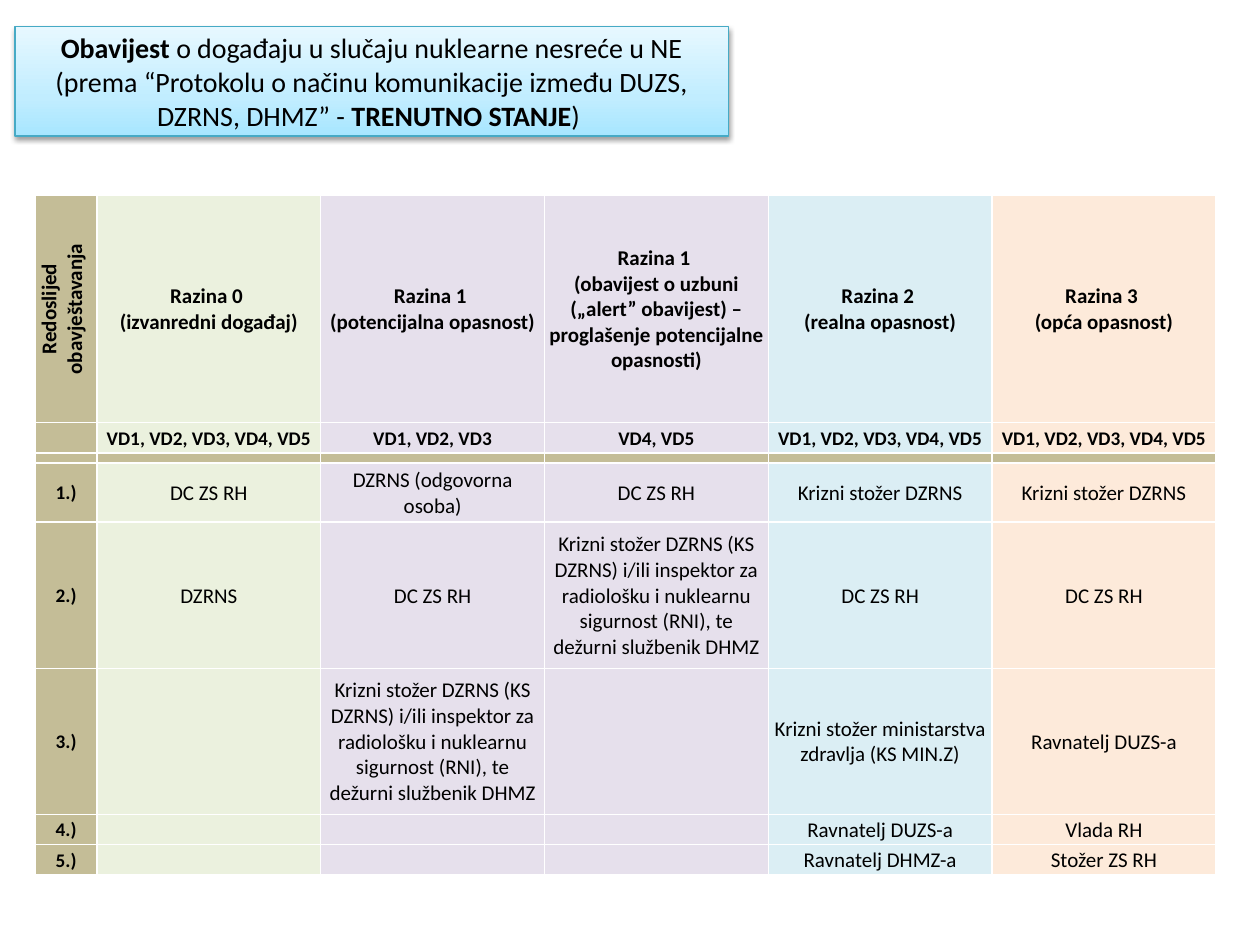
from lxml import etree
from pptx import Presentation
from pptx.dml.color import RGBColor as RGB
from pptx.enum.text import MSO_ANCHOR as Anchor, MSO_AUTO_SIZE as Fit, PP_ALIGN as Align
from pptx.oxml import parse_xml
from pptx.oxml.ns import nsdecls, qn
from pptx.util import Inches, Pt

BLACK = RGB(0, 0, 0)
WHITE = RGB(255, 255, 255)
TEAL = RGB(0x46, 0xAA, 0xC5)
TAN = RGB(0xC4, 0xBD, 0x97)
GREEN = RGB(0xEB, 0xF1, 0xDE)
LILAC = RGB(0xE6, 0xE0, 0xEC)
BLUE = RGB(0xDB, 0xEE, 0xF4)
PEACH = RGB(0xFD, 0xEA, 0xDA)
FILLS = [TAN, GREEN, LILAC, LILAC, BLUE, PEACH]
STOPS = [(0, RGB(0xA7, 0xE6, 0xFF)), (35, RGB(0xC1, 0xED, 0xFF)),
         (100, RGB(0xE7, 0xF8, 0xFF))]

TITLE = [
    ("Obavijest ", True),
    ("o događaju u slučaju nuklearne nesreće u NE (prema “Protokolu o načinu "
     "komunikacije između DUZS, DZRNS, DHMZ” - ", False),
    ("TRENUTNO STANJE", True),
    (") ", False),
]
ALL = "VD1, VD2, VD3, VD4, VD5"
DUTY = "DC ZS RH"
CRISIS = "Krizni stožer DZRNS"
TEAM = (CRISIS + " (KS DZRNS) i/ili inspektor za radiološku i nuklearnu "
        "sigurnost (RNI), te dežurni službenik DHMZ")
# Row height, then the cells; \v is a line break
ROWS = [
    (1.37, ["Redoslijed obavještavanja",
            "Razina 0 \v(izvanredni događaj)",
            "Razina 1 \v(potencijalna opasnost)",
            "Razina 1 \v(obavijest o uzbuni („alert” obavijest) – "
            "proglašenje potencijalne opasnosti)",
            "Razina 2 \v(realna opasnost)",
            "Razina 3 \v(opća opasnost)"]),
    (0.24, ["", ALL, "VD1, VD2, VD3", "VD4, VD5", ALL, ALL]),
    (0.08, [""] * 6),
    (0.47, ["1.)", DUTY, "DZRNS (odgovorna osoba)", DUTY, CRISIS, CRISIS]),
    (1.16, ["2.)", "DZRNS", DUTY, TEAM, DUTY, DUTY]),
    (1.16, ["3.)", "", TEAM, "",
            "Krizni stožer ministarstva zdravlja (KS MIN.Z)", "Ravnatelj DUZS-a"]),
    (0.24, ["4.)", "", "", "", "Ravnatelj DUZS-a", "Vlada RH"]),
    (0.24, ["5.)", "", "", "", "Ravnatelj DHMZ-a", "Stožer ZS RH"]),
]
HEAD, CODES, BAND = 0, 1, 2
CELL = dict(margin_left=Inches(0.01), margin_right=Inches(0.01),
            margin_top=Inches(0.01), margin_bottom=0,
            vertical_anchor=Anchor.MIDDLE)


def set_all(item, **vals):
    for name, val in vals.items():
        setattr(item, name, val)


def set_font(run, size, bold):
    set_all(run.font, name="Calibri", size=Pt(size), bold=bold)
    run.font.color.rgb = BLACK


def add_title(slide, left, top, width, height):
    box = slide.shapes.title
    set_all(box, left=left, top=top, width=width, height=height)
    # Gradient, outline and soft shadow
    stops = "".join(f'<a:gs pos="{pos * 1000}"><a:srgbClr val="{rgb}"/></a:gs>'
                    for pos, rgb in STOPS)
    ns = nsdecls("a")
    for xml in (
        f'<a:prstGeom {ns} prst="rect"><a:avLst/></a:prstGeom>',
        f'<a:gradFill {ns}><a:gsLst>{stops}</a:gsLst>'
        '<a:lin ang="16200000" scaled="0"/></a:gradFill>',
        f'<a:effectLst {ns}><a:outerShdw blurRad="39400" dist="20300" '
        'dir="5400000" rotWithShape="0"><a:srgbClr val="000000">'
        '<a:alpha val="38000"/></a:srgbClr></a:outerShdw></a:effectLst>',
    ):
        box._element.spPr.append(parse_xml(xml))
    box.line.color.rgb = TEAL
    box.line.width = Pt(0.75)
    # Wording
    frame = box.text_frame
    set_all(frame, word_wrap=True, auto_size=Fit.NONE, vertical_anchor=Anchor.MIDDLE)
    para = frame.paragraphs[0]
    para.alignment = Align.CENTER
    for text, bold in TITLE:
        run = para.add_run()
        run.text = text
        set_font(run, 16, bold)


def add_edges(cell):
    props = cell._tc.get_or_add_tcPr()
    for side in ("lnL", "lnR", "lnT", "lnB"):
        props.append(parse_xml(
            f'<a:{side} {nsdecls("a")} w="12700"><a:solidFill>'
            f'<a:srgbClr val="{WHITE}"/></a:solidFill></a:{side}>'))


def fill_cell(cell, text, fill, size, bold):
    set_all(cell, **CELL)
    add_edges(cell)
    cell.fill.solid()
    cell.fill.fore_color.rgb = fill
    para = cell.text_frame.paragraphs[0]
    para.text = text
    para.alignment = Align.CENTER
    for run in para.runs:
        set_font(run, size, bold)
    # Breaks and empty cells need a size too, or they stretch the row
    for gap in para._p.findall(qn("a:br")):
        etree.SubElement(gap, qn("a:rPr")).set("sz", str(size * 100))
    if not text:
        etree.SubElement(para._p, qn("a:endParaRPr")).set("sz", str(size * 100))


def add_grid(slide, left, top, width, height):
    grid = slide.shapes.add_table(len(ROWS), len(FILLS), left, top, width, height).table
    set_all(grid, first_row=False, horz_banding=False)
    first = Inches(0.49)
    for num, col in enumerate(grid.columns):
        col.width = first if num == 0 else int((width - first) / (len(FILLS) - 1))
    for r, (tall, texts) in enumerate(ROWS):
        grid.rows[r].height = Inches(tall)
        for c, text in enumerate(texts):
            small = r == CODES or (c == 0 and r != HEAD)
            size = 2 if r == BAND else 11 if small else 12
            fill = TAN if r == BAND else FILLS[c]
            fill_cell(grid.cell(r, c), text, fill, size, c == 0 or r <= CODES)
    # Upright heading of the order column
    grid.cell(HEAD, 0)._tc.get_or_add_tcPr().set("vert", "vert270")


def main():
    deck = Presentation()
    set_all(deck, slide_width=Inches(10), slide_height=Inches(7.5))
    slide = deck.slides.add_slide(deck.slide_layouts[5])
    add_title(slide, Inches(0.12), Inches(0.21), Inches(5.66), Inches(0.87))
    add_grid(slide, Inches(0.28), Inches(1.55), Inches(9.37), Inches(4.96))
    deck.save("out.pptx")


if __name__ == "__main__":
    main()
